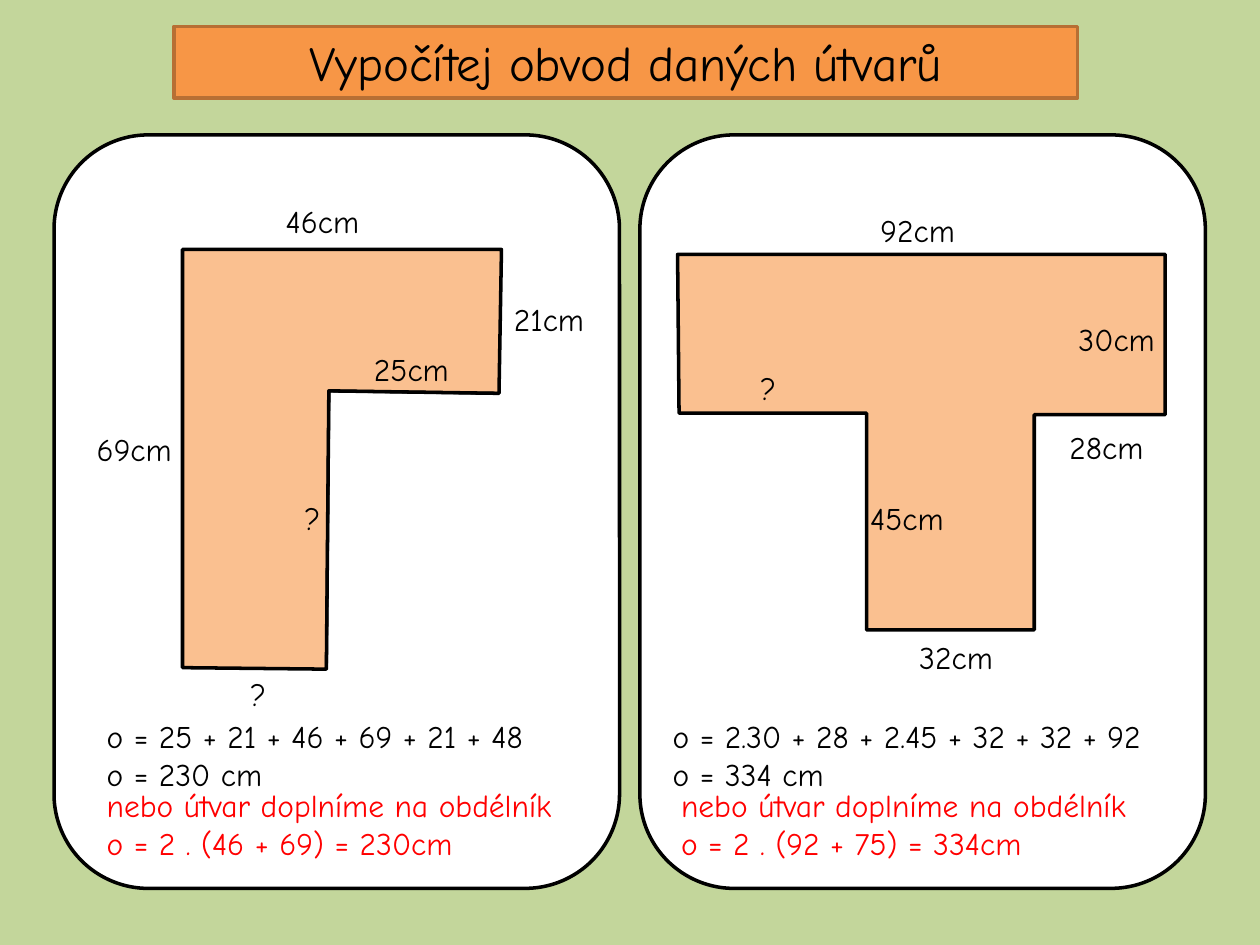
from dataclasses import dataclass

from lxml.etree import SubElement
from pptx import Presentation
from pptx.dml.color import RGBColor
from pptx.enum.shapes import MSO_CONNECTOR, MSO_SHAPE
from pptx.enum.text import MSO_ANCHOR, MSO_AUTO_SIZE, PP_ALIGN
from pptx.oxml.ns import qn
from pptx.util import Cm, Pt


@dataclass(frozen=True)
class Theme:
    """Colours, font and sizes of the slide."""
    background: str = "C3D69B"
    banner: str = "F79646"
    banner_edge: str = "B76F34"
    panel: str = "FFFFFF"
    figure: str = "FAC090"
    ink: str = "000000"
    alternative: str = "FF0000"
    font: str = "Comic Neue"
    title_size: int = 28
    body_size: int = 18
    outline: float = 2
    edge: float = 1.75


THEME = Theme()
PANEL_WIDTH, PANEL_HEIGHT, PANEL_TOP = 11.4, 15.19, 2.72
LINE_HEIGHT = 0.77
TEXT_PADDING = 0.25
WIDE, MEDIUM, SHORT, MARK = 3, 2.39, 2.21, 1.4

L_SHAPE = {
    "left": 1.09,
    "corners": [(2.59, 2.31), (9.02, 2.31), (8.97, 5.21),
                (5.54, 5.16), (5.49, 10.77), (2.59, 10.74)],
    "inner_edges": [2, 3],
    "labels": [("25cm", 6.2, 4.22, WIDE), ("21cm", 9.02, 3.2, SHORT),
               ("46cm", 4.42, 1.22, WIDE), ("69cm", 0.61, 5.82, MEDIUM),
               ("?", 3.71, 10.77, MARK), ("?", 4.8, 7.21, MARK)],
    "solution": ("o = 25 + 21 + 46 + 69 + 21 + 48\no = 230 cm", 0.81, 10),
    "alternative": ("nebo útvar doplníme na obdélník\n"
                    "o = 2 . (46 + 69) = 230cm", 0.81, 10),
}
T_SHAPE = {
    "left": 12.9,
    "corners": [(0.76, 2.41), (10.59, 2.41), (10.59, 5.64), (7.95, 5.64),
                (7.95, 9.98), (4.57, 9.98), (4.57, 5.61), (0.79, 5.61)],
    "inner_edges": [2, 3, 5, 6],
    "labels": [("32cm", 5.38, 10.01, WIDE), ("30cm", 8.59, 3.61, SHORT),
               ("92cm", 4.6, 1.4, WIDE), ("45cm", 4.39, 7.21, MEDIUM),
               ("?", 2.18, 4.6, MARK), ("28cm", 8.41, 5.79, WIDE)],
    "solution": ("o = 2.30 + 28 + 2.45 + 32 + 32 + 92\no = 334 cm", 0.41, 11.2),
    "alternative": ("nebo útvar doplníme na obdélník\n"
                    "o = 2 . (92 + 75) = 334cm", 0.58, 10),
}


def paint(shape, fill, line):
    """Give a shape a flat fill and outline."""
    shape.fill.solid()
    shape.fill.fore_color.rgb = RGBColor.from_string(fill)
    shape.line.color.rgb = RGBColor.from_string(line)
    shape.line.width = Pt(THEME.outline)


def write(frame, text, size=THEME.body_size, color=THEME.ink,
          align=PP_ALIGN.LEFT, anchor=MSO_ANCHOR.TOP,
          fit=MSO_AUTO_SIZE.SHAPE_TO_FIT_TEXT):
    """Write formatted text into a frame, one paragraph per line."""
    frame.text = text
    frame.word_wrap = True
    frame.auto_size = fit
    frame.vertical_anchor = anchor
    for paragraph in frame.paragraphs:
        paragraph.alignment = align
        for run in paragraph.runs:
            run.font.name = THEME.font
            run.font.size = Pt(size)
            run.font.color.rgb = RGBColor.from_string(color)


def add_text(slide, text, left, top, width, **style):
    """Add a text box as tall as its lines."""
    height = LINE_HEIGHT * len(text.splitlines()) + TEXT_PADDING
    box = slide.shapes.add_textbox(Cm(left), Cm(top), Cm(width), Cm(height))
    write(box.text_frame, text, **style)


def add_edge(slide, start, end):
    """Draw one straight edge between two points."""
    edge = slide.shapes.add_connector(
        MSO_CONNECTOR.STRAIGHT, *(Cm(value) for value in (*start, *end)))
    edge.line.color.rgb = RGBColor.from_string(THEME.ink)
    edge.line.width = Pt(THEME.edge)
    SubElement(edge.element.spPr, qn("a:effectLst"))


def add_banner(slide, left, top, width, height):
    """Place the title as a coloured banner."""
    title = slide.shapes.title
    title.left, title.top = Cm(left), Cm(top)
    title.width, title.height = Cm(width), Cm(height)
    paint(title, THEME.banner, THEME.banner_edge)
    write(title.text_frame, "Vypočítej obvod daných útvarů",
          size=THEME.title_size, align=PP_ALIGN.CENTER,
          anchor=MSO_ANCHOR.MIDDLE, fit=MSO_AUTO_SIZE.NONE)


def add_figure(slide, corners, inner_edges):
    """Draw the polygon and strengthen its inner edges."""
    points = [(Cm(x), Cm(y)) for x, y in corners]
    builder = slide.shapes.build_freeform(*points[0])
    builder.add_line_segments(points[1:], close=True)
    figure = builder.convert_to_shape()
    figure.shadow.inherit = False
    paint(figure, THEME.figure, THEME.ink)
    for index in inner_edges:
        add_edge(slide, corners[index], corners[index + 1])


def add_panel(slide, task, left, top, width, height):
    """Place a task panel with figure, labels and both solutions."""
    panel = slide.shapes.add_shape(
        MSO_SHAPE.ROUNDED_RECTANGLE, Cm(left), Cm(top), Cm(width), Cm(height))
    panel.shadow.inherit = False
    paint(panel, THEME.panel, THEME.ink)
    corners = [(left + x, top + y) for x, y in task["corners"]]
    add_figure(slide, corners, task["inner_edges"])
    for label, x, y, label_width in task["labels"]:
        add_text(slide, label, left + x, top + y, label_width)
    for part, y, color in (("solution", 11.61, THEME.ink),
                           ("alternative", 13, THEME.alternative)):
        text, x, text_width = task[part]
        add_text(slide, text, left + x, top + y, text_width, color=color)


def main():
    """Build and save the slide."""
    presentation = Presentation()
    presentation.slide_width, presentation.slide_height = Cm(25.4), Cm(19.05)
    slide = presentation.slides.add_slide(presentation.slide_layouts[5])
    slide.background.fill.solid()
    slide.background.fill.fore_color.rgb = RGBColor.from_string(THEME.background)
    add_banner(slide, 3.51, 0.53, 18.21, 1.45)
    for task in (L_SHAPE, T_SHAPE):
        add_panel(slide, task, task["left"], PANEL_TOP, PANEL_WIDTH, PANEL_HEIGHT)
    presentation.save("out.pptx")


if __name__ == "__main__":
    main()
